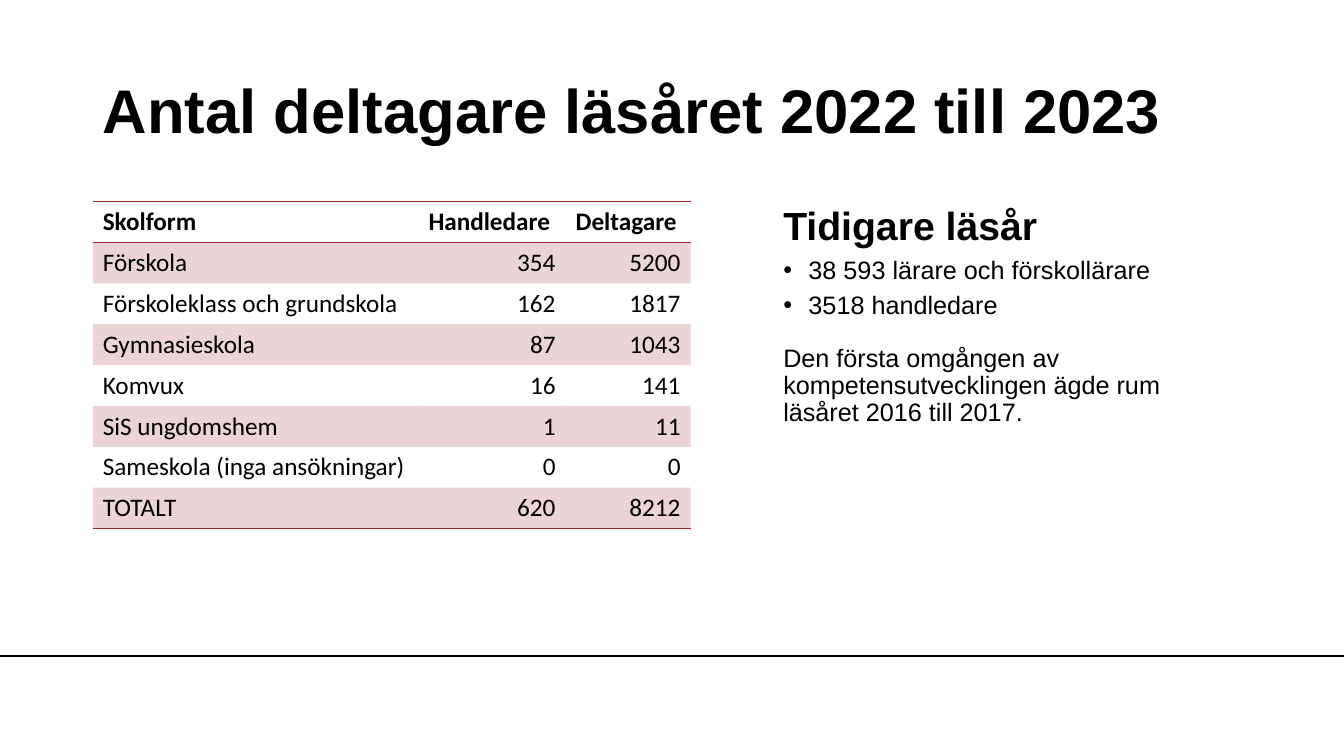
"""Build the slide on participants in the school year 2022 to 2023."""
from lxml.etree import SubElement
from pptx import Presentation
from pptx.dml.color import RGBColor
from pptx.enum.shapes import MSO_CONNECTOR
from pptx.enum.text import MSO_ANCHOR, PP_ALIGN
from pptx.oxml.ns import qn
from pptx.util import Inches, Pt

TITLE = "Antal deltagare läsåret 2022 till 2023"
HEADERS = ("Skolform", "Handledare", "Deltagare")
SCHOOLS = [
    ("Förskola", 354, 5200),
    ("Förskoleklass och grundskola", 162, 1817),
    ("Gymnasieskola", 87, 1043),
    ("Komvux", 16, 141),
    ("SiS ungdomshem", 1, 11),
    ("Sameskola (inga ansökningar)", 0, 0),
    ("TOTALT", 620, 8212),
]
# (text, size, bold, bulleted, space before)
EARLIER_YEARS = [
    ("Tidigare läsår", 28, True, False, 0),
    ("38 593 lärare och förskollärare", 18, False, True, 6),
    ("3518 handledare", 18, False, True, 6),
    ("Den första omgången av kompetensutvecklingen ägde rum "
     "läsåret 2016 till 2017.", 18, False, False, 18),
]
BLACK, RED = "000000", "9F2936"
BAND_OPACITY = 20
COLUMN_WIDTHS = (3.23, 1.46, 1.24)
ROW_HEIGHT = 0.405
LEFT, TOP = 0.92, 2
NO_STYLE = "{2D5ABB26-0587-4C30-8999-92F81FD0307C}"


def color(value):
    return RGBColor.from_string(value)


def style(paragraph, face, size, bold):
    paragraph.font.name = face
    paragraph.font.size = Pt(size)
    paragraph.font.bold = bold
    paragraph.font.color.rgb = color(BLACK)


def add_border(cell, side):
    border = SubElement(cell._tc.get_or_add_tcPr(), qn(f"a:ln{side}"), w=str(Pt(1)))
    fill = SubElement(border, qn("a:solidFill"))
    SubElement(fill, qn("a:srgbClr"), val=RED)


def fill_band(cell):
    cell.fill.solid()
    cell.fill.fore_color.rgb = color(RED)
    tint = cell._tc.tcPr.find(f"{qn('a:solidFill')}/{qn('a:srgbClr')}")
    SubElement(tint, qn("a:alpha"), val=str(BAND_OPACITY * 1000))


def add_bullet(paragraph):
    properties = paragraph._p.get_or_add_pPr()
    properties.set("marL", str(Inches(0.25)))
    properties.set("indent", str(Inches(-0.25)))
    SubElement(properties, qn("a:buFont"), typeface="Arial")
    SubElement(properties, qn("a:buChar"), char="•")


def add_title(slide):
    title = slide.shapes.title
    title.left, title.top = Inches(LEFT), Inches(0.4)
    title.width, title.height = Inches(11.5), Inches(1.45)
    title.text_frame.text = TITLE
    title.text_frame.vertical_anchor = MSO_ANCHOR.MIDDLE
    heading = title.text_frame.paragraphs[0]
    heading.alignment = PP_ALIGN.LEFT
    heading.line_spacing = 0.9
    style(heading, "Arial", 44, True)


def add_footer_line(slide):
    footer_line = slide.shapes.add_connector(
        MSO_CONNECTOR.STRAIGHT, 0, Inches(6.51), Inches(13.33), Inches(6.51))
    footer_line.line.color.rgb = color(BLACK)
    footer_line.line.width = Pt(1)
    SubElement(footer_line._element.spPr, qn("a:effectLst"))


def add_school_table(slide):
    rows = [HEADERS, *SCHOOLS]
    frame = slide.shapes.add_table(
        len(rows), len(HEADERS), Inches(LEFT), Inches(TOP),
        Inches(sum(COLUMN_WIDTHS)), Inches(ROW_HEIGHT * len(rows)))
    table = frame.table
    table._tbl.tblPr.find(qn("a:tableStyleId")).text = NO_STYLE
    table.horz_banding = False
    for column, width in zip(table.columns, COLUMN_WIDTHS):
        column.width = Inches(width)
    for row_index, row in enumerate(rows):
        is_header = row_index == 0
        for column_index, value in enumerate(row):
            cell = table.cell(row_index, column_index)
            cell.text = str(value)
            entry = cell.text_frame.paragraphs[0]
            style(entry, "Calibri", 18, is_header)
            if isinstance(value, int):
                entry.alignment = PP_ALIGN.RIGHT
            if is_header:
                add_border(cell, "T")
            if is_header or row_index == len(rows) - 1:
                add_border(cell, "B")
            if row_index % 2:
                fill_band(cell)
            else:
                cell.fill.background()


def add_earlier_years(slide):
    box = slide.shapes.add_textbox(Inches(7.67), Inches(TOP), Inches(4.75), Inches(4.34))
    text = box.text_frame
    text.word_wrap = True
    for index, (line, size, bold, bulleted, space) in enumerate(EARLIER_YEARS):
        paragraph = text.add_paragraph() if index else text.paragraphs[0]
        paragraph.text = line
        paragraph.line_spacing = 0.9
        paragraph.space_before = Pt(space)
        if bulleted:
            add_bullet(paragraph)
        style(paragraph, "Arial", size, bold)


def main():
    deck = Presentation()
    deck.slide_width, deck.slide_height = Inches(13.33), Inches(7.5)
    slide = deck.slides.add_slide(deck.slide_layouts[5])
    add_footer_line(slide)
    add_title(slide)
    add_school_table(slide)
    add_earlier_years(slide)
    deck.save("out.pptx")


if __name__ == "__main__":
    main()
